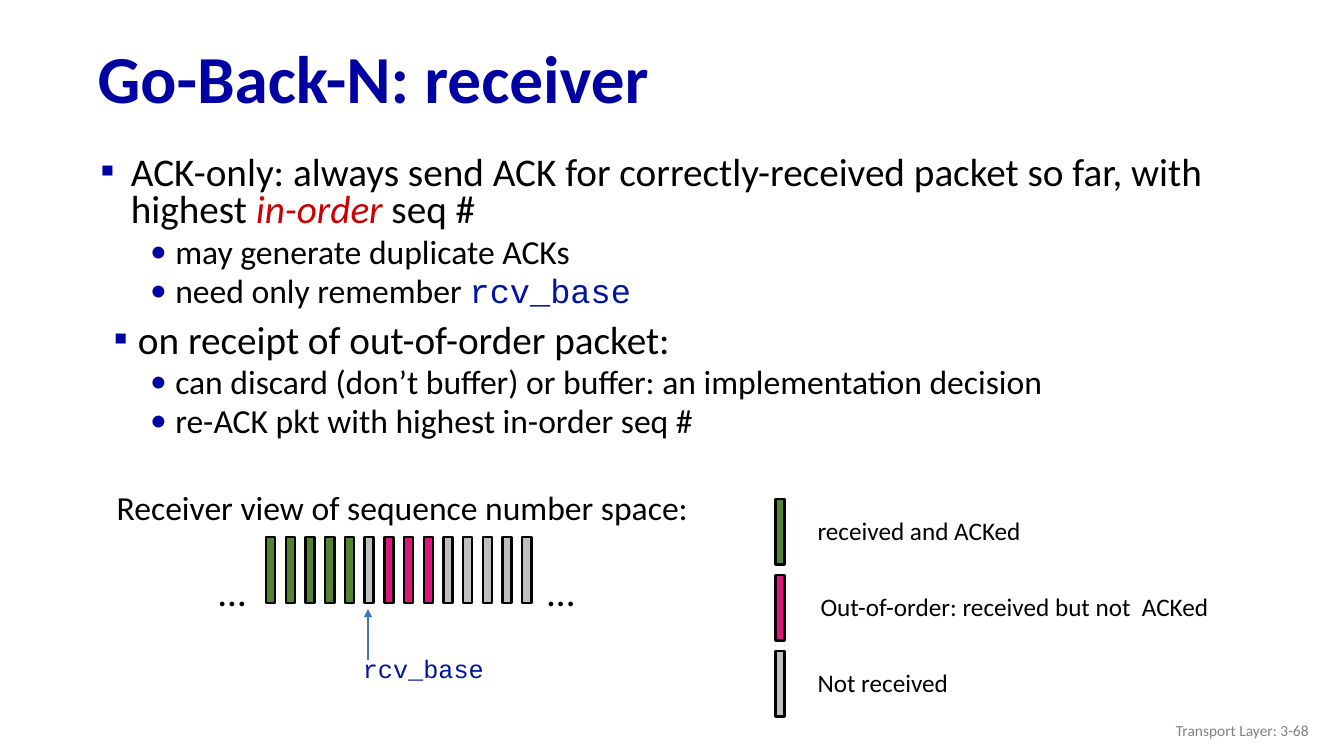
"""Build the Go-Back-N receiver slide."""
from lxml import etree
from pptx import Presentation
from pptx import util as u
from pptx.dml.color import RGBColor
from pptx.enum import shapes, text
from pptx.oxml.ns import qn

NAVY = RGBColor(0x00, 0x00, 0xA3)
CODE_BLUE = RGBColor(0x00, 0x13, 0xA3)
ARROW_BLUE = RGBColor(0x44, 0x72, 0xC4)
RED = RGBColor(0xCC, 0x00, 0x00)
GREEN = RGBColor(0x54, 0x82, 0x35)
PINK = RGBColor(0xDF, 0x16, 0x7A)
SILVER = RGBColor(0xBF, 0xBF, 0xBF)
GRAY = RGBColor(0x80, 0x80, 0x80)
BLACK = RGBColor(0x00, 0x00, 0x00)

PLAIN = {"name": "Calibri", "color": BLACK}
CODE = {"name": "Courier New", "color": CODE_BLUE}
EMPHASIS = {"name": "Calibri", "color": RED, "italic": True}
TITLE = {"name": "Calibri", "color": NAVY, "bold": True}
FOOTER = {"name": "Calibri", "color": GRAY}

WIDTH, HEIGHT = 13.33, 7.5
BULLETS = [
    (0, 0.32, -0.3, [
        ("ACK-only: always send ACK for correctly-received packet so far, with highest ", PLAIN),
        ("in-order", EMPHASIS), (" seq #", PLAIN)]),
    (1, 0.76, -0.25, [("may generate duplicate ACKs", PLAIN)]),
    (1, 0.76, -0.25, [("need only remember ", PLAIN), ("rcv_base", CODE)]),
    (0, 0.39, -0.24, [("on receipt of out-of-order packet:", PLAIN)]),
    (1, 0.76, -0.25, [("can discard (don’t buffer) or buffer: an implementation decision", PLAIN)]),
    (1, 0.76, -0.25, [("re-ACK pkt with highest in-order seq #", PLAIN)]),
]
LEVELS = [("▪", 28, 10), ("•", 24, 5)]
PACKETS = [GREEN] * 5 + [SILVER] + [PINK] * 3 + [SILVER] * 5
LEGEND = [
    (GREEN, "received and ACKed", 8.01, 2.29),
    (PINK, "Out-of-order: received but not  ACKed", 8.04, 4.09),
    (SILVER, "Not received", 8.01, 1.51),
]
LABELS = [
    ("Receiver view of sequence number space:", 24, PLAIN, (1.06, 4.78, 5.93, 0.5)),
    ("…", 28, PLAIN, (2.07, 5.58, 0.47, 0.57)),
    ("…", 28, PLAIN, (5.33, 5.58, 0.47, 0.57)),
    ("rcv_base", 18, CODE, (3.5, 6.43, 1.41, 0.4)),
]
BAR_WIDTH, BAR_HEIGHT = 0.09, 0.65
PACKET_LEFT, PACKET_TOP, PACKET_PITCH = 2.64, 5.33, 2.54 / 13
LEGEND_LEFT, LEGEND_TOP, LEGEND_PITCH = 7.69, 4.95, 0.755
ARROW_X, ARROW_BOTTOM, ARROW_TOP = 3.65, 6.55, 6.04


def add_run(paragraph, words, size, style):
    run = paragraph.add_run()
    run.text = words
    font = run.font
    font.size = u.Pt(size)
    font.name = style["name"]
    font.color.rgb = style["color"]
    font.bold = style.get("bold")
    font.italic = style.get("italic")


def add_box(slide, box, wrap=True, anchor=text.MSO_ANCHOR.TOP):
    frame = slide.shapes.add_textbox(*map(u.Inches, box)).text_frame
    frame.word_wrap = wrap
    frame.vertical_anchor = anchor
    return frame


def add_label(slide, words, size, style, box):
    frame = add_box(slide, box, wrap=False)
    frame.auto_size = text.MSO_AUTO_SIZE.SHAPE_TO_FIT_TEXT
    add_run(frame.paragraphs[0], words, size, style)


def add_bar(slide, left, top, color):
    box = map(u.Inches, (left, top, BAR_WIDTH, BAR_HEIGHT))
    bar = slide.shapes.add_shape(shapes.MSO_SHAPE.RECTANGLE, *box)
    bar.shadow.inherit = False
    bar.fill.solid()
    bar.fill.fore_color.rgb = color
    bar.line.color.rgb = BLACK
    bar.line.width = u.Pt(1.75)


def add_bullets(slide):
    frame = add_box(slide, (0.88, 1.5, 11.28, 3.12))
    for index, (level, margin, indent, runs) in enumerate(BULLETS):
        paragraph = frame.add_paragraph() if index else frame.paragraphs[0]
        mark, size, space = LEVELS[level]
        properties = paragraph._p.get_or_add_pPr()
        properties.set("marL", str(u.Inches(margin)))
        properties.set("indent", str(u.Inches(indent)))
        color = etree.SubElement(properties, qn("a:buClr"))
        etree.SubElement(color, qn("a:srgbClr"), val=str(NAVY))
        etree.SubElement(properties, qn("a:buFont"), typeface="Calibri")
        etree.SubElement(properties, qn("a:buChar"), char=mark)
        paragraph.level = level
        paragraph.line_spacing = 0.8
        paragraph.space_before = u.Pt(space if index else 0)
        for words, style in runs:
            add_run(paragraph, words, size, style)


def add_arrow(slide):
    ends = map(u.Inches, (ARROW_X, ARROW_BOTTOM, ARROW_X, ARROW_TOP))
    arrow = slide.shapes.add_connector(shapes.MSO_CONNECTOR.STRAIGHT, *ends)
    arrow.line.color.rgb = ARROW_BLUE
    arrow.line.width = u.Pt(1.75)
    etree.SubElement(arrow.line._get_or_add_ln(), qn("a:tailEnd"), type="triangle")
    etree.SubElement(arrow._element.spPr, qn("a:effectLst"))


def main():
    presentation = Presentation()
    presentation.slide_width = u.Inches(WIDTH)
    presentation.slide_height = u.Inches(HEIGHT)
    slide = presentation.slides.add_slide(presentation.slide_layouts[6])

    title = add_box(slide, (0.87, 0.32, 12.14, 0.98), anchor=text.MSO_ANCHOR.MIDDLE)
    title.paragraphs[0].line_spacing = 0.9
    add_run(title.paragraphs[0], "Go-Back-N: receiver", 48, TITLE)
    add_bullets(slide)

    for column, color in enumerate(PACKETS):
        add_bar(slide, PACKET_LEFT + column * PACKET_PITCH, PACKET_TOP, color)
    for row, (color, words, left, width) in enumerate(LEGEND):
        top = LEGEND_TOP + row * LEGEND_PITCH
        add_bar(slide, LEGEND_LEFT, top, color)
        add_label(slide, words, 18, PLAIN, (left, top + 0.11, width, 0.4))
    for label in LABELS:
        add_label(slide, *label)
    add_arrow(slide)

    footer = add_box(slide, (10.08, 7.05, 3, 0.4), anchor=text.MSO_ANCHOR.MIDDLE)
    footer.paragraphs[0].alignment = text.PP_ALIGN.RIGHT
    add_run(footer.paragraphs[0], "Transport Layer: 3-68", 11, FOOTER)
    presentation.save("out.pptx")


if __name__ == "__main__":
    main()
